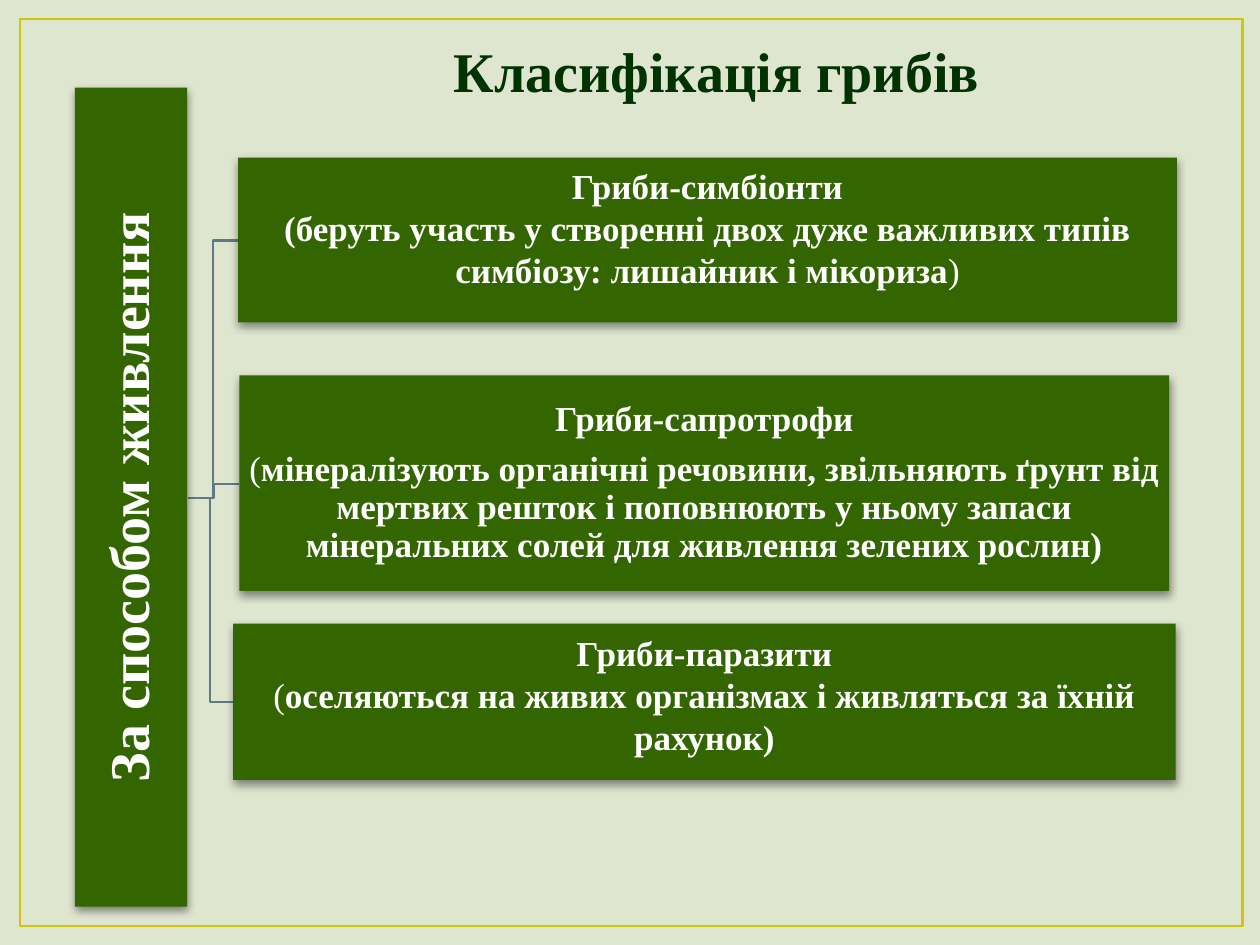
from lxml import etree
from pptx import Presentation
from pptx.dml.color import RGBColor
from pptx.enum.shapes import MSO_SHAPE
from pptx.enum.text import MSO_ANCHOR, MSO_AUTO_SIZE, PP_ALIGN
from pptx.oxml import parse_xml
from pptx.util import Inches, Pt

HUES = {
    "back": "DFE6D0", "frame": "CFC60D", "box": "336600",
    "link": "5E7B84", "title": "003300", "text": "FFFFFF",
}
SHADOW = """<a:effectLst
 xmlns:a="http://schemas.openxmlformats.org/drawingml/2006/main">
<a:outerShdw blurRad="63500" dist="25400" dir="5400000" rotWithShape="0">
<a:srgbClr val="000000"><a:alpha val="43000"/></a:srgbClr>
</a:outerShdw></a:effectLst>"""


def hue(name):
    return RGBColor.from_string(HUES[name])


def write(shape, paras, size=20, color="text", align=PP_ALIGN.CENTER,
          spacing=None, after=0):
    """Fill a shape with paragraphs, each a list of (text, bold) runs."""
    frame = shape.text_frame
    for i, runs in enumerate(paras):
        para = frame.paragraphs[0] if i == 0 else frame.add_paragraph()
        para.alignment = align
        para.line_spacing = spacing
        para.space_after = Pt(after)
        for text, bold in runs:
            run = para.add_run()
            run.text = text
            run.font.name = "Times New Roman"
            run.font.size = Pt(size)
            run.font.bold = bold
            run.font.color.rgb = hue(color)


def block(left, top, width, height, inset, foot):
    """Add a green box with a soft shadow; foot is its bottom inset."""
    box = shapes.add_shape(MSO_SHAPE.RECTANGLE, Inches(left), Inches(top),
                           Inches(width), Inches(height))
    box.fill.solid()
    box.fill.fore_color.rgb = hue("box")
    box.line.fill.background()
    box._element.spPr.append(parse_xml(SHADOW))
    frame = box.text_frame
    frame.word_wrap = True
    frame.vertical_anchor = MSO_ANCHOR.MIDDLE
    frame.margin_left = frame.margin_right = frame.margin_top = Inches(inset)
    frame.margin_bottom = Inches(foot)
    return box


deck = Presentation()
deck.slide_width, deck.slide_height = Inches(10), Inches(7.5)
slide = deck.slides.add_slide(deck.slide_layouts[6])
slide.background.fill.solid()
slide.background.fill.fore_color.rgb = hue("back")
shapes = slide.shapes

border = shapes.add_shape(MSO_SHAPE.RECTANGLE, Inches(0.16), Inches(0.15),
                          Inches(9.7), Inches(7.2))
border.shadow.inherit = False
border.fill.background()
border.line.color.rgb = hue("frame")
border.line.width = Pt(1.5)

# Elbow links from the side bar to each box
start, mid = 1.49, 3.95
for end, level in [(1.85, 5.57), (1.9, 3.84), (1.89, 1.91)]:
    bend = (start + end) / 2
    path = shapes.build_freeform(Inches(start), Inches(mid))
    path.add_line_segments(
        [(Inches(x), Inches(y))
         for x, y in [(bend, mid), (bend, level), (end, level)]],
        close=False)
    link = path.convert_to_shape()
    link.shadow.inherit = False
    link.fill.background()
    link.line.color.rgb = hue("link")
    link.line.width = Pt(1.25)

side = block(-2.21, 3.5, 6.5, 0.89, 0.02, 0.02)
side.rotation = 270
write(side, [[("За способом живлення", True)]], size=32, spacing=0.9)

kinds = [
    ((1.89, 1.25, 7.45, 1.31), 0.21, {},
     [[("Гриби-симбіонти", True)],
      [("(беруть участь у створенні двох дуже важливих типів "
        "симбіозу: лишайник і мікориза", True), (")", False)]]),
    ((1.9, 2.98, 7.38, 1.71), 0.01, {"spacing": 0.9, "after": 7},
     [[("Гриби-сапротрофи", True)],
      [("(", False),
       ("мінералізують органічні речовини, звільняють ґрунт від мертвих "
        "решток і поповнюють у ньому запаси мінеральних солей для "
        "живлення зелених рослин)", True)]]),
    ((1.85, 4.95, 7.48, 1.24), 0.12, {},
     [[("Гриби-паразити", True)],
      [("(", False),
       ("оселяються на живих організмах і живляться за їхній рахунок)",
        True)]]),
]
for place, foot, style, paras in kinds:
    write(block(*place, 0.01, foot), paras, **style)

title = shapes.add_textbox(Inches(3.5), Inches(0.24), Inches(4.42), Inches(0.64))
title.text_frame.word_wrap = False
title.text_frame.auto_size = MSO_AUTO_SIZE.SHAPE_TO_FIT_TEXT
write(title, [[("Класифікація грибів", True)]], size=32, color="title",
      align=PP_ALIGN.LEFT)

deck.save("out.pptx")
